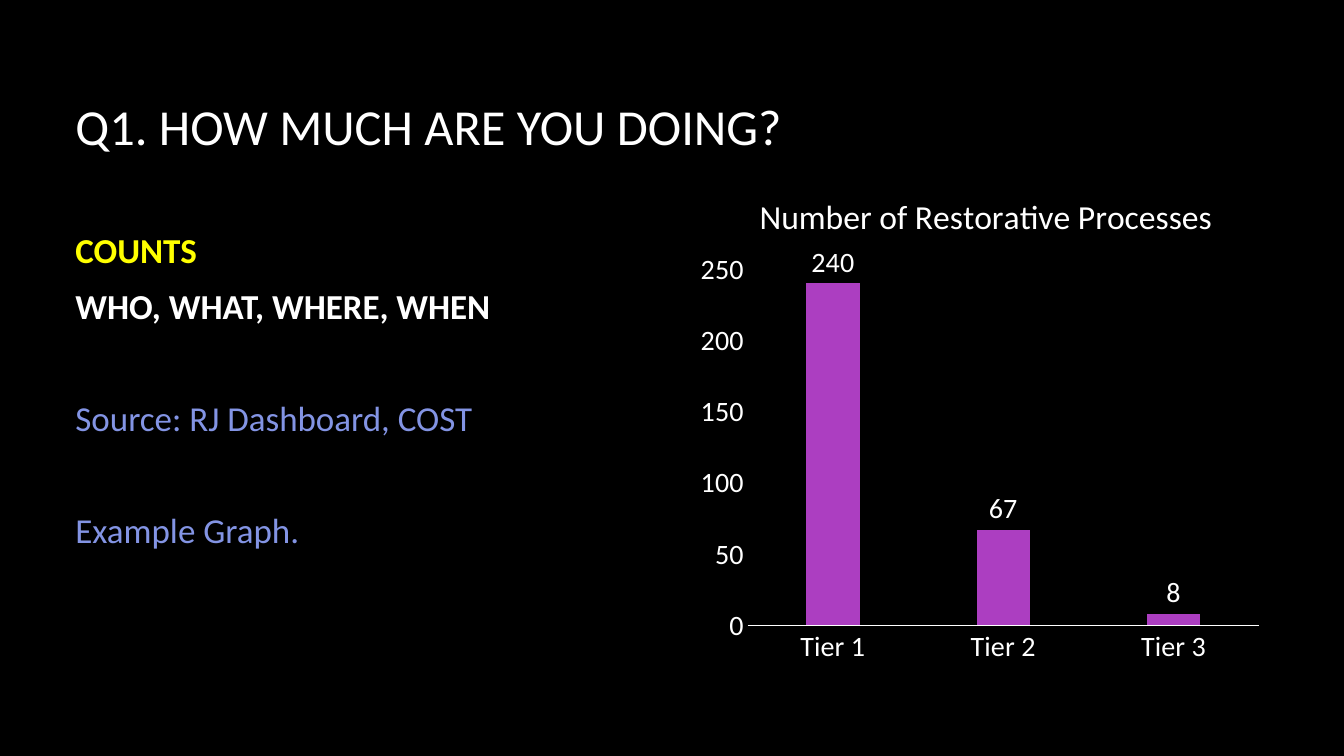
from lxml import etree
from pptx import Presentation
from pptx.chart.data import CategoryChartData
from pptx.dml.color import RGBColor
from pptx.enum.chart import XL_CHART_TYPE as Kind, XL_LABEL_POSITION as Spot
from pptx.enum.chart import XL_TICK_MARK as Tick
from pptx.enum.text import MSO_ANCHOR as Anchor
from pptx.oxml.ns import qn
from pptx.util import Inches, Pt

FACE = "Calibri"
WHITE, BLACK, YELLOW = "FFFFFF", "000000", "FFFF00"
BLUE, PURPLE = "8394E4", "AC3EC1"
LEFT = 0.65
# wording, colour, bold, space after
LINES = [
    ("COUNTS", YELLOW, True, 10),
    ("WHO, WHAT, WHERE, WHEN", WHITE, True, 50),
    ("Source: RJ Dashboard, COST", BLUE, False, 50),
    ("Example Graph.", BLUE, False, 10),
]


def tint(code):
    return RGBColor.from_string(code)


def style(font, size, color=WHITE, bold=False):
    font.name, font.size, font.bold = FACE, Pt(size), bold
    font.color.rgb = tint(color)


def add_text(slide, box, lines, size, anchor, top=0.05, bottom=0.05):
    frame = slide.shapes.add_textbox(*map(Inches, box)).text_frame
    frame.word_wrap = True
    frame.vertical_anchor = anchor
    frame.margin_top, frame.margin_bottom = Inches(top), Inches(bottom)
    frame.text = "\n".join(line[0] for line in lines)
    for para, (_, color, bold, after) in zip(frame.paragraphs, lines):
        para.space_after = Pt(after)
        style(para.runs[0].font, size, color, bold)


def set_place(parent, before, **parts):
    """Give a chart part a manual layout, in shares of the chart."""
    for old in parent.findall(qn("c:layout")):
        parent.remove(old)
    layout = etree.Element(qn("c:layout"))
    manual = etree.SubElement(layout, qn("c:manualLayout"))
    for name, value in parts.items():
        etree.SubElement(manual, qn(f"c:{name}")).set("val", str(value))
    parent.find(qn(before)).addprevious(layout)


def style_axis(axis):
    axis.has_major_gridlines = False
    axis.major_tick_mark = axis.minor_tick_mark = Tick.NONE
    style(axis.tick_labels.font, 20)


def add_bars(slide, box):
    data = CategoryChartData()
    data.categories = ["Tier 1", "Tier 2", "Tier 3"]
    data.add_series("Series 1", (240, 67, 8))
    chart = slide.shapes.add_chart(
        Kind.COLUMN_CLUSTERED, *map(Inches, box), data).chart
    style(chart.font, 20)
    chart.has_legend = False
    chart.has_title = True
    title = chart.chart_title
    title.include_in_layout = False
    title.text_frame.text = "Number of Restorative Processes"
    style(title.text_frame.paragraphs[0].runs[0].font, 24)

    cats, vals = chart.category_axis, chart.value_axis
    for axis in (cats, vals):
        style_axis(axis)
    cats.format.line.color.rgb = tint(WHITE)
    cats.format.line.width = Pt(0.75)
    vals.format.line.fill.background()
    vals.minimum_scale, vals.maximum_scale, vals.major_unit = 0, 250, 50

    plot = chart.plots[0]
    plot.gap_width, plot.overlap, plot.vary_by_categories = 219, -27, False
    bars = plot.series[0]
    bars.format.fill.solid()
    bars.format.fill.fore_color.rgb = tint(PURPLE)
    labels = bars.data_labels
    labels.show_value = True
    labels.position = Spot.OUTSIDE_END
    style(labels.font, 20)

    area = chart.element.find(".//" + qn("c:plotArea"))
    set_place(area, "c:barChart", layoutTarget="inner", xMode="edge",
              yMode="edge", x=0.1, y=0.21, w=0.88, h=0.7)
    set_place(title.element if hasattr(title, "element") else title._element,
              "c:overlay", xMode="edge", yMode="edge", x=0.11, y=0.05)


def main():
    deck = Presentation()
    deck.slide_width, deck.slide_height = Inches(13.33), Inches(7.5)
    slide = deck.slides.add_slide(deck.slide_layouts[6])
    slide.background.fill.solid()
    slide.background.fill.fore_color.rgb = tint(BLACK)
    title = [("Q1. HOW MUCH ARE YOU DOING?", WHITE, False, 0)]
    add_text(slide, (LEFT, 0.62, 11.08, 1.59), title, 36,
             Anchor.MIDDLE, bottom=0.4)
    add_text(slide, (LEFT, 1.83, 12.37, 4.62), LINES, 25,
             Anchor.TOP, top=0.44)
    add_bars(slide, (6.84, 1.61, 5.76, 5.05))
    deck.save("out.pptx")


if __name__ == "__main__":
    main()
